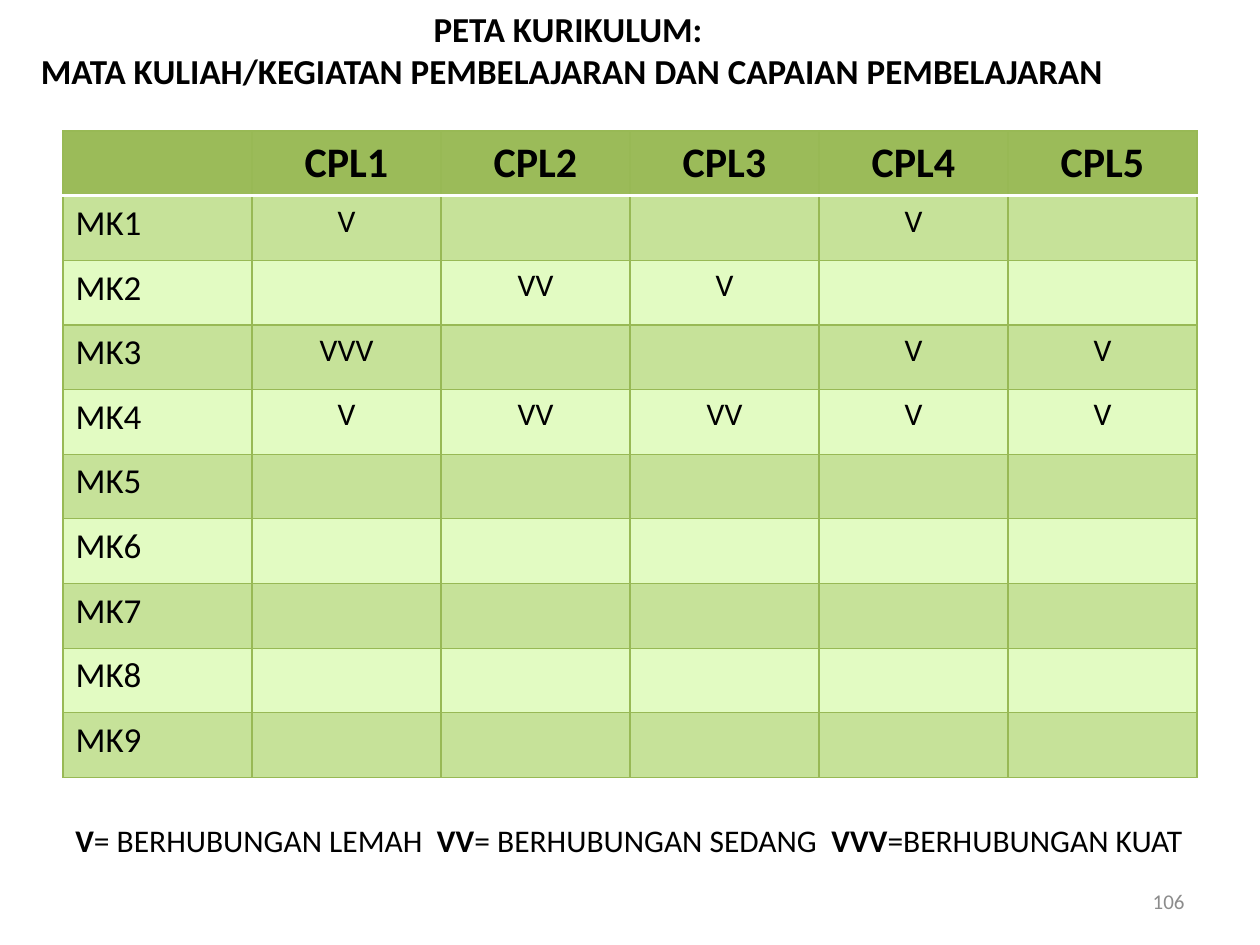
import pptx
import pptx.util
import pptx.dml.color
import pptx.enum.text
import pptx.oxml.ns
import lxml.etree

Inches, Pt = pptx.util.Inches, pptx.util.Pt
ALIGN = pptx.enum.text.PP_ALIGN
MIDDLE = pptx.enum.text.MSO_ANCHOR.MIDDLE

TITLE = ("PETA KURIKULUM: ", "MATA KULIAH/KEGIATAN PEMBELAJARAN DAN CAPAIAN PEMBELAJARAN")
OUTCOMES = ["CPL1", "CPL2", "CPL3", "CPL4", "CPL5"]
COURSES = [
    ("MK1", {"CPL1": "V", "CPL4": "V"}),
    ("MK2", {"CPL2": "VV", "CPL3": "V"}),
    ("MK3", {"CPL1": "VVV", "CPL4": "V", "CPL5": "V"}),
    ("MK4", {"CPL1": "V", "CPL2": "VV", "CPL3": "VV", "CPL4": "V", "CPL5": "V"}),
    ("MK5", {}),
    ("MK6", {}),
    ("MK7", {}),
    ("MK8", {}),
    ("MK9", {}),
]
LEGEND = [
    ("V", "= BERHUBUNGAN LEMAH"),
    ("VV", "= BERHUBUNGAN SEDANG"),
    ("VVV", "=BERHUBUNGAN KUAT"),
]
LEGEND_TABS = (2.87, 6.0)
PAGE_NUMBER = "106"

COLORS = {
    "text": "000000",
    "number": "8C8C8C",
    "header": "9BBB59",
    "odd": "C6E299",
    "even": "E2FBC2",
    "grid": "98B955",
    "rule": "FFFFFF",
}


def rgb(name):
    return pptx.dml.color.RGBColor.from_string(COLORS[name])


def style(paragraph, size, color="text", bold=None, align=ALIGN.LEFT):
    paragraph.alignment = align
    font = paragraph.font
    font.name, font.size, font.bold = "Calibri", Pt(size), bold
    font.color.rgb = rgb(color)


def add_child(parent, tag, **attributes):
    return lxml.etree.SubElement(parent, pptx.oxml.ns.qn(tag), attributes)


def add_border(cell, side, color, width):
    line = add_child(cell._tc.get_or_add_tcPr(), f"a:ln{side}", w=str(Pt(width)))
    add_child(add_child(line, "a:solidFill"), "a:srgbClr", val=COLORS[color])


def fill_cell(cell, text, fill, size, bold, align, top, bottom):
    """Write and paint one cell; top and bottom are (colour, width) pairs."""
    grid = ("grid", 0.75)
    for side, border in zip("LRTB", (grid, grid, top, bottom)):
        add_border(cell, side, *border)
    cell.fill.solid()
    cell.fill.fore_color.rgb = rgb(fill)
    cell.text = text
    style(cell.text_frame.paragraphs[0], size, bold=bold, align=align)


def add_title(slide):
    title = slide.shapes.title
    title.left, title.top = Inches(0.04), Inches(0.12)
    title.width, title.height = Inches(9), Inches(0.55)
    frame = title.text_frame
    frame.vertical_anchor = MIDDLE
    frame.auto_size = pptx.enum.text.MSO_AUTO_SIZE.NONE
    paragraph = frame.paragraphs[0]
    paragraph.add_run().text = TITLE[0]
    paragraph.add_line_break()
    paragraph.add_run().text = TITLE[1]
    style(paragraph, 20, bold=True, align=ALIGN.CENTER)


def add_map(slide):
    rows = [["", *OUTCOMES]]
    rows += [[course, *(links.get(o, "") for o in OUTCOMES)] for course, links in COURSES]
    table = slide.shapes.add_table(
        len(rows), len(rows[0]), Inches(0.5), Inches(1.04), Inches(9), Inches(5.13)
    ).table
    grid, rule = ("grid", 0.75), ("rule", 2)
    for r, row in enumerate(rows):
        fill = "header" if r == 0 else ("even", "odd")[r % 2]
        top = rule if r == 1 else grid
        bottom = rule if r == 0 else grid
        for c, text in enumerate(row):
            size = 24 if r == 0 else 20 if c == 0 else 18
            align = ALIGN.LEFT if c == 0 else ALIGN.CENTER
            fill_cell(table.cell(r, c), text, fill, size, r == 0, align, top, bottom)


def add_text_box(slide, left, top, width, height):
    box = slide.shapes.add_textbox(Inches(left), Inches(top), Inches(width), Inches(height))
    box.text_frame.word_wrap = True
    return box.text_frame


def add_legend(slide):
    paragraph = add_text_box(slide, 0.5, 6.47, 9.33, 0.4).paragraphs[0]
    tabs = add_child(paragraph._p.get_or_add_pPr(), "a:tabLst")
    for position in LEGEND_TABS:
        add_child(tabs, "a:tab", pos=str(Inches(position)), algn="l")
    for i, (mark, meaning) in enumerate(LEGEND):
        run = paragraph.add_run()
        run.text, run.font.bold = mark, True
        gap = "\t" if i < len(LEGEND) - 1 else ""
        paragraph.add_run().text = meaning + gap
    style(paragraph, 18)


def add_page_number(slide):
    frame = add_text_box(slide, 7.17, 6.95, 2.33, 0.4)
    frame.vertical_anchor = MIDDLE
    frame.text = PAGE_NUMBER
    style(frame.paragraphs[0], 12, "number", align=ALIGN.RIGHT)


def main():
    deck = pptx.Presentation()
    deck.slide_width, deck.slide_height = Inches(10), Inches(7.5)
    slide = deck.slides.add_slide(deck.slide_layouts[5])
    add_title(slide)
    add_map(slide)
    add_legend(slide)
    add_page_number(slide)
    deck.save("out.pptx")


if __name__ == "__main__":
    main()
